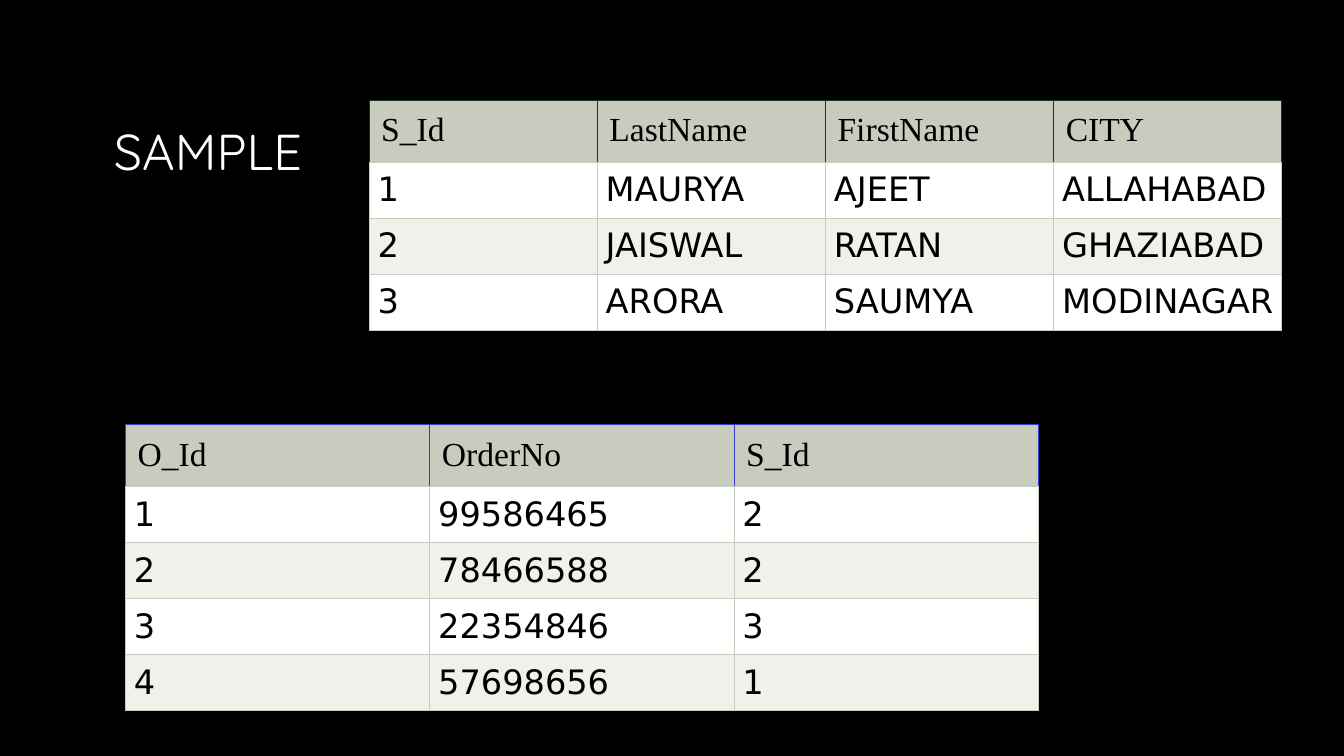
from pptx import Presentation
from pptx.dml.color import RGBColor
from pptx.enum.text import MSO_ANCHOR, MSO_AUTO_SIZE, PP_ALIGN
from pptx.oxml import parse_xml
from pptx.oxml.ns import nsdecls
from pptx.util import Pt

LEFT, JUSTIFY = PP_ALIGN.LEFT, PP_ALIGN.JUSTIFY
BOTTOM, NO_FIT = MSO_ANCHOR.BOTTOM, MSO_AUTO_SIZE.NONE

TITLE = "SAMPLE"
PEOPLE = [
    ("S_Id", "LastName", "FirstName", "CITY"),
    ("1", "MAURYA", "AJEET", "ALLAHABAD"),
    ("2", "JAISWAL", "RATAN", "GHAZIABAD"),
    ("3", "ARORA", "SAUMYA", "MODINAGAR"),
]
ORDERS = [
    ("O_Id", "OrderNo", "S_Id"),
    ("1", "99586465", "2"),
    ("2", "78466588", "2"),
    ("3", "22354846", "3"),
    ("4", "57698656", "1"),
]

THEME = {
    "back": "000000", "title": "FFFFFF", "text": "000000",
    "head": "C7CCBE", "rule": "C7CCBE", "bands": ("EFF1EB", "FFFFFF"),
    "green": "103C1E", "blue": "3040CD",
    "title font": "Quicksand", "head font": "Times New Roman",
    "body font": "DejaVu Sans", "title size": 36, "cell size": 24,
}
WIDTH = 652
HEAD_ROW, BODY_ROW = 44.4, 40
HEAD_PAD, BODY_PAD = 8.6, 6

# data, left, top, colour of the header rules
TABLES = [
    (PEOPLE, 263.7, 71.4, THEME["green"]),
    (ORDERS, 89.7, 303.1, THEME["blue"]),
]


def style(para, font, size, color):
    para.font.name = font
    para.font.size = Pt(size)
    para.font.bold = False
    para.font.color.rgb = RGBColor.from_string(color)


def edge(cell, colors):
    """Draw the left, right, top and bottom rules; call before the fill."""
    props = cell._tc.get_or_add_tcPr()
    for side, color in zip("LRTB", colors):
        props.append(parse_xml(
            f'<a:ln{side} {nsdecls("a")} w="{Pt(0.75)}"><a:solidFill>'
            f'<a:srgbClr val="{color}"/></a:solidFill></a:ln{side}>'))


def fill_cell(cell, text, row, accent):
    head = row == 0
    rule = THEME["rule"]
    pad = Pt(HEAD_PAD if head else BODY_PAD)
    cell.margin_left = cell.margin_right = pad
    cell.margin_top = cell.margin_bottom = pad
    edge(cell, [accent] * 3 + [rule] if head else [rule] * 4)
    cell.fill.solid()
    color = THEME["head"] if head else THEME["bands"][row % 2]
    cell.fill.fore_color.rgb = RGBColor.from_string(color)
    cell.text_frame.text = text
    para = cell.text_frame.paragraphs[0]
    para.alignment = LEFT if head else JUSTIFY
    font = THEME["head font" if head else "body font"]
    style(para, font, THEME["cell size"], THEME["text"])


def add_grid(slide, data, left, top, accent):
    rows, cols = len(data), len(data[0])
    high = HEAD_ROW + BODY_ROW * (rows - 1)
    grid = slide.shapes.add_table(
        rows, cols, Pt(left), Pt(top), Pt(WIDTH), Pt(high)).table
    for col in grid.columns:
        col.width = Pt(WIDTH / cols)
    for r, line in enumerate(data):
        grid.rows[r].height = Pt(BODY_ROW if r else HEAD_ROW)
        for c, text in enumerate(line):
            fill_cell(grid.cell(r, c), text, r, accent)


def add_title(slide):
    title = slide.shapes.title
    title.left, title.top = Pt(72), Pt(38)
    title.width, title.height = Pt(816), Pt(96)
    frame = title.text_frame
    frame.text = TITLE
    frame.auto_size = NO_FIT
    frame.vertical_anchor = BOTTOM
    frame.margin_left = frame.margin_right = Pt(9.4)
    frame.margin_top = frame.margin_bottom = Pt(5)
    para = frame.paragraphs[0]
    para.alignment = LEFT
    para.line_spacing = 0.8
    style(para, THEME["title font"], THEME["title size"], THEME["title"])


def main():
    deck = Presentation()
    deck.slide_width, deck.slide_height = Pt(960), Pt(540)
    slide = deck.slides.add_slide(deck.slide_layouts[5])
    back = slide.background.fill
    back.solid()
    back.fore_color.rgb = RGBColor.from_string(THEME["back"])
    add_title(slide)
    for table in TABLES:
        add_grid(slide, *table)
    deck.save("out.pptx")


if __name__ == "__main__":
    main()
